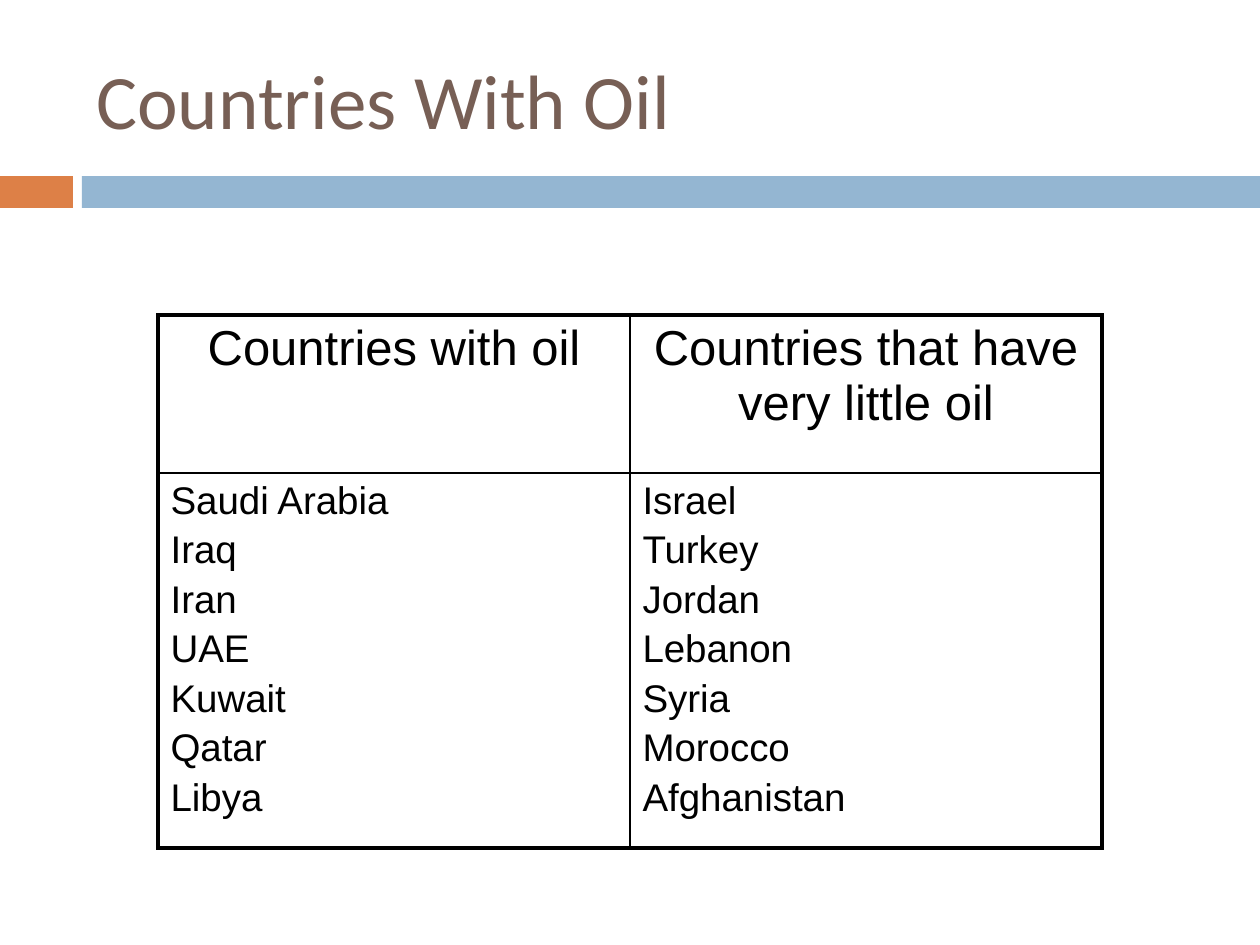
from lxml.etree import SubElement
from pptx import Presentation
from pptx.dml.color import RGBColor
from pptx.enum.shapes import MSO_SHAPE
from pptx.enum.text import MSO_ANCHOR, PP_ALIGN
from pptx.oxml.ns import qn
from pptx.util import Emu, Pt

TITLE = "Countries With Oil"
COLUMNS = [
    ("Countries with oil",
     ["Saudi Arabia", "Iraq", "Iran", "UAE", "Kuwait", "Qatar", "Libya"]),
    ("Countries that have very little oil",
     ["Israel", "Turkey", "Jordan", "Lebanon", "Syria", "Morocco", "Afghanistan"]),
]
BANDS = [((0, 176, 73, 32), "DD8047"), ((82, 176, 1178, 32), "94B6D2")]
TITLE_BOX = (84, 31, 1124, 136)
TABLE_LEFT, TABLE_TOP = 158, 315
COLUMN_WIDTH = 472
ROW_HEIGHTS = [158, 360]
TITLE_FORMAT = {"name": "Calibri", "size": Pt(44)}
HEADING_FORMAT = {"name": "Arial", "size": Pt(28)}
COUNTRY_FORMAT = {"name": "Arial", "size": Pt(22)}
OUTER_LINE, INNER_LINE = Pt(2.25), Pt(1)
COUNTRY_GAP = Pt(3.7)


def px(length):
    return Emu(length * 914400 // 126)


def color(value):
    return RGBColor.from_string(value)


def write(frame, lines, formats, ink, align=PP_ALIGN.LEFT):
    for index, line in enumerate(lines):
        para = frame.add_paragraph() if index else frame.paragraphs[0]
        para.alignment = align
        if index:
            para.space_before = COUNTRY_GAP
        span = para.add_run()
        span.text = line
        for name, value in formats.items():
            setattr(span.font, name, value)
        span.font.color.rgb = color(ink)


def add_borders(cell, widths):
    properties = cell._tc.get_or_add_tcPr()
    for index, (side, width) in enumerate(widths.items()):
        line = SubElement(properties, qn(f"a:ln{side}"), w=str(int(width)))
        fill = SubElement(line, qn("a:solidFill"))
        SubElement(fill, qn("a:srgbClr"), val="000000")
        properties.insert(index, line)


def add_table(page):
    frame = page.shapes.add_table(
        len(ROW_HEIGHTS), len(COLUMNS), px(TABLE_LEFT), px(TABLE_TOP),
        px(COLUMN_WIDTH * len(COLUMNS)), px(sum(ROW_HEIGHTS)))
    table = frame.table
    table.first_row = table.horz_banding = False
    for row, height in zip(table.rows, ROW_HEIGHTS):
        row.height = px(height)
    for c, (heading, countries) in enumerate(COLUMNS):
        table.columns[c].width = px(COLUMN_WIDTH)
        write(table.cell(0, c).text_frame, [heading], HEADING_FORMAT, "000000",
              PP_ALIGN.CENTER)
        write(table.cell(1, c).text_frame, countries, COUNTRY_FORMAT, "000000")
        for r in range(len(ROW_HEIGHTS)):
            cell = table.cell(r, c)
            cell.fill.background()
            edges = {"L": c == 0, "R": c == len(COLUMNS) - 1,
                     "T": r == 0, "B": r == len(ROW_HEIGHTS) - 1}
            add_borders(cell, {side: OUTER_LINE if outer else INNER_LINE
                               for side, outer in edges.items()})


def main():
    """Build the slide on countries with and without oil."""
    deck = Presentation()
    deck.slide_width, deck.slide_height = px(1260), px(945)
    page = deck.slides.add_slide(deck.slide_layouts[6])
    for place, fill in BANDS:
        band = page.shapes.add_shape(MSO_SHAPE.RECTANGLE, *map(px, place))
        band.shadow.inherit = False
        band.fill.solid()
        band.fill.fore_color.rgb = color(fill)
        band.line.fill.background()
    box = page.shapes.add_textbox(*map(px, TITLE_BOX))
    box.text_frame.word_wrap = True
    box.text_frame.vertical_anchor = MSO_ANCHOR.MIDDLE
    write(box.text_frame, [TITLE], TITLE_FORMAT, "775F55")
    add_table(page)
    deck.save("out.pptx")


if __name__ == "__main__":
    main()
